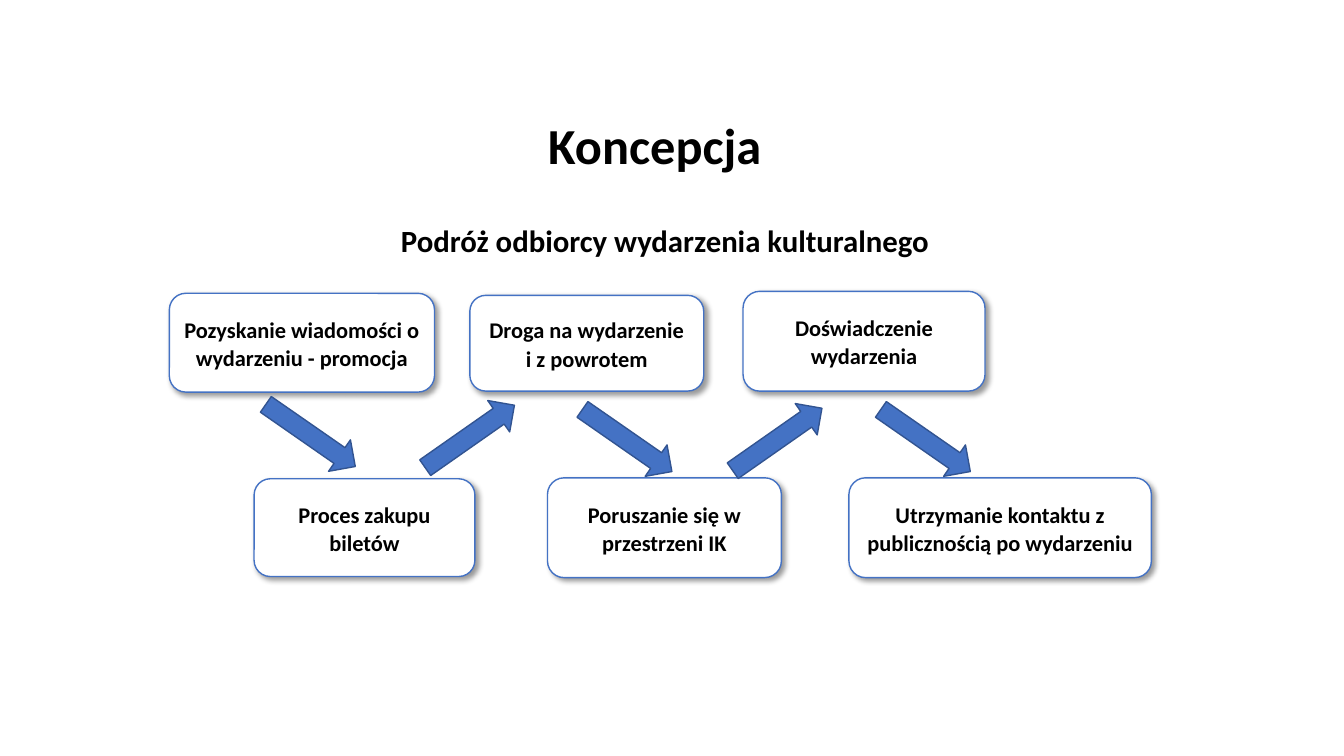
from typing import NamedTuple

from lxml.etree import SubElement
from pptx import Presentation
from pptx.dml.color import RGBColor
from pptx.enum.shapes import MSO_SHAPE
from pptx.enum.text import MSO_ANCHOR, MSO_AUTO_SIZE, PP_ALIGN
from pptx.oxml.ns import qn
from pptx.shapes.autoshape import Shape
from pptx.slide import Slide
from pptx.util import Emu, Pt

EMU_PER_PX = 9144  # 100 px to the inch

BLACK = RGBColor(0x00, 0x00, 0x00)
WHITE = RGBColor(0xFF, 0xFF, 0xFF)
BLUE = RGBColor(0x44, 0x72, 0xC4)
DARK_BLUE = RGBColor(0x32, 0x54, 0x91)

ARROW_WIDTH, ARROW_HEIGHT = 108, 38
DOWN, UP = 34.8, 325


class Step(NamedTuple):
    text: str
    left: int
    top: int
    width: int
    height: int
    spacing: float


class Arrow(NamedTuple):
    left: int
    top: int
    rotation: float


STEPS = [
    Step("Pozyskanie wiadomości o wydarzeniu - promocja", 168, 291, 263, 98, 1.07),
    Step("Proces zakupu biletów", 252, 475, 219, 97, 1.06),
    Step("Droga na wydarzenie i z powrotem", 466, 293, 232, 95, 1.06),
    Step("Poruszanie się w przestrzeni IK", 543, 474, 232, 99, 1.05),
    Step("Doświadczenie wydarzenia", 737, 289, 240, 99, 1.05),
    Step("Utrzymanie kontaktu z publicznością po wydarzeniu", 842, 474, 300, 99, 1.06),
]

ARROWS = [
    Arrow(254, 413, DOWN),
    Arrow(412, 414, UP),
    Arrow(568, 418, DOWN),
    Arrow(717, 417, UP),
    Arrow(864, 418, DOWN),
]


def px(length: int) -> Emu:
    return Emu(length * EMU_PER_PX)


def write_text(shape: Shape, text: str, *, size: int, spacing: float) -> None:
    frame = shape.text_frame
    frame.word_wrap = True
    frame.auto_size = MSO_AUTO_SIZE.NONE
    frame.vertical_anchor = MSO_ANCHOR.MIDDLE
    paragraph = frame.paragraphs[0]
    paragraph.alignment = PP_ALIGN.CENTER
    paragraph.line_spacing = spacing
    paragraph.space_before = Pt(0)
    paragraph.space_after = Pt(8)
    run = paragraph.add_run()
    run.text = text
    run.font.name = "Calibri"
    run.font.size = Pt(size)
    run.font.bold = True
    run.font.color.rgb = BLACK


def add_box(slide: Slide, kind: MSO_SHAPE, left: int, top: int, width: int, height: int,
            *, fill: RGBColor, line: RGBColor, line_width: float = 1) -> Shape:
    box = slide.shapes.add_shape(kind, px(left), px(top), px(width), px(height))
    box.fill.solid()
    box.fill.fore_color.rgb = fill
    box.line.color.rgb = line
    box.line.width = Pt(line_width)
    box.shadow.inherit = False
    return box


def add_drop_shadow(shape: Shape) -> None:
    effects = shape.element.spPr.find(qn("a:effectLst"))
    shadow = SubElement(effects, qn("a:outerShdw"), blurRad=str(Pt(4)), dist=str(Pt(3)),
                        dir=str(45 * 60000), algn="tl", rotWithShape="0")
    color = SubElement(shadow, qn("a:srgbClr"), val=str(BLACK))
    SubElement(color, qn("a:alpha"), val="40000")


def add_step(slide: Slide, step: Step) -> None:
    box = add_box(slide, MSO_SHAPE.ROUNDED_RECTANGLE, step.left, step.top,
                  step.width, step.height, fill=WHITE, line=BLUE)
    add_drop_shadow(box)
    write_text(box, step.text, size=16, spacing=step.spacing)


def add_arrow(slide: Slide, arrow: Arrow) -> None:
    shape = add_box(slide, MSO_SHAPE.RIGHT_ARROW, arrow.left, arrow.top,
                    ARROW_WIDTH, ARROW_HEIGHT, fill=BLUE, line=DARK_BLUE)
    shape.rotation = arrow.rotation


def main() -> None:
    presentation = Presentation()
    presentation.slide_width, presentation.slide_height = px(1333), px(750)
    slide = presentation.slides.add_slide(presentation.slide_layouts[5])

    # Title
    title = slide.shapes.title
    title.left, title.top, title.width, title.height = px(117), px(86), px(1065), px(84)
    write_text(title, "Koncepcja", size=36, spacing=1.5)

    # Subtitle
    subtitle = add_box(slide, MSO_SHAPE.RECTANGLE, 382, 211, 555, 52,
                       fill=WHITE, line=WHITE, line_width=0.5)
    write_text(subtitle, "Podróż odbiorcy wydarzenia kulturalnego", size=22, spacing=1.07)

    # Visitor journey
    for step in STEPS:
        add_step(slide, step)
    for arrow in ARROWS:
        add_arrow(slide, arrow)

    presentation.save("out.pptx")


if __name__ == "__main__":
    main()
